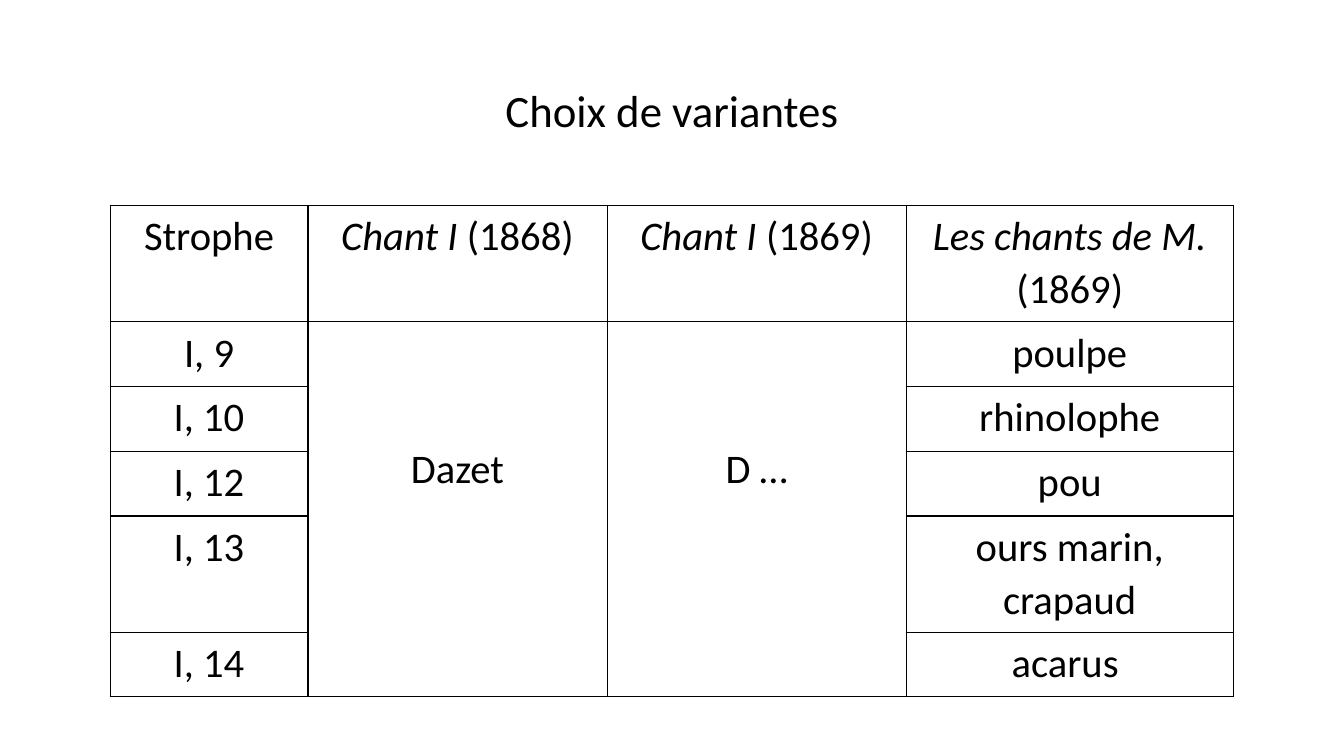
from dataclasses import dataclass

from lxml import etree
from pptx import Presentation, util as u
from pptx.dml.color import RGBColor
from pptx.enum import text
from pptx.oxml import ns

BLACK = RGBColor(0, 0, 0)
FONT = "Calibri"
COLUMN_WIDTHS = [4.98, 7.54, 7.54, 8.24]
SHORT_ROW, TALL_ROW = 1.63, 2.93


@dataclass
class Entry:
    """Text of one cell: an italic work title, then upright wording."""
    row: int
    column: int
    upright: str
    italic: str = ""
    rows_spanned: int = 1
    side: float = 0.48
    top: float = 0.08


HEADINGS = [("", "Strophe"), ("Chant I", " (1868)"), ("Chant I", " (1869)"),
            ("Les chants de M.", " (1869)")]
VARIANTS = [("I, 9", "poulpe"), ("I, 10", "rhinolophe"), ("I, 12", "pou"),
            ("I, 13", "ours marin, crapaud"), ("I, 14", "acarus ")]
SHARED_NAMES = ["Dazet", "D …"]


def style_paragraph(paragraph, size: float, spacing: float) -> None:
    paragraph.alignment = text.PP_ALIGN.CENTER
    paragraph.line_spacing = spacing
    for run in paragraph.runs:
        run.font.name = FONT
        run.font.size = u.Pt(size)
        run.font.color.rgb = BLACK


def outline_cell(cell) -> None:
    """Give the cell four thin black borders and no fill."""
    properties = cell._tc.get_or_add_tcPr()
    for edge in ("a:lnL", "a:lnR", "a:lnT", "a:lnB"):
        border = etree.SubElement(properties, ns.qn(edge), w=str(u.Pt(1)))
        fill = etree.SubElement(border, ns.qn("a:solidFill"))
        etree.SubElement(fill, ns.qn("a:srgbClr"), val=str(BLACK))
    cell.fill.background()


def write_entry(table, entry: Entry) -> None:
    cell = table.cell(entry.row, entry.column)
    if entry.rows_spanned > 1:
        cell.merge(table.cell(entry.row + entry.rows_spanned - 1, entry.column))
    cell.margin_left = cell.margin_right = u.Cm(entry.side)
    cell.margin_top, cell.margin_bottom = u.Cm(entry.top), 0
    paragraph = cell.text_frame.paragraphs[0]
    for wording, is_italic in ((entry.italic, True), (entry.upright, False)):
        if wording:
            run = paragraph.add_run()
            run.text = wording
            run.font.italic = is_italic
    style_paragraph(paragraph, 29, 1.07)


def add_title(slide) -> None:
    title = slide.shapes.add_textbox(u.Cm(2.33), u.Cm(1.01), u.Cm(29.21), u.Cm(3.68))
    frame = title.text_frame
    frame.word_wrap = True
    frame.vertical_anchor = text.MSO_ANCHOR.MIDDLE
    frame.text = "Choix de variantes"
    style_paragraph(frame.paragraphs[0], 32, 0.9)


def add_variants_table(slide) -> None:
    row_heights = [TALL_ROW] + [
        TALL_ROW if "," in variant else SHORT_ROW for _, variant in VARIANTS]
    table = slide.shapes.add_table(
        len(row_heights), len(COLUMN_WIDTHS), u.Cm(2.78), u.Cm(5.18),
        u.Cm(sum(COLUMN_WIDTHS)), u.Cm(sum(row_heights))).table
    table.first_row = table.horz_banding = False
    for column, width in zip(table.columns, COLUMN_WIDTHS):
        column.width = u.Cm(width)
    for row, height in zip(table.rows, row_heights):
        row.height = u.Cm(height)
    for cell in table.iter_cells():
        outline_cell(cell)

    entries = [Entry(0, column, upright, italic)
               for column, (italic, upright) in enumerate(HEADINGS)]
    for row, (strophe, variant) in enumerate(VARIANTS, start=1):
        entries += [Entry(row, 0, strophe), Entry(row, 3, variant)]
    entries += [Entry(1, column, name, rows_spanned=len(VARIANTS), side=0.66, top=3.02)
                for column, name in enumerate(SHARED_NAMES, start=1)]
    for entry in entries:
        write_entry(table, entry)


def main() -> None:
    presentation = Presentation()
    presentation.slide_width, presentation.slide_height = u.Cm(33.87), u.Cm(19.05)
    slide = presentation.slides.add_slide(presentation.slide_layouts[6])
    add_variants_table(slide)
    add_title(slide)
    presentation.save("out.pptx")


if __name__ == "__main__":
    main()
